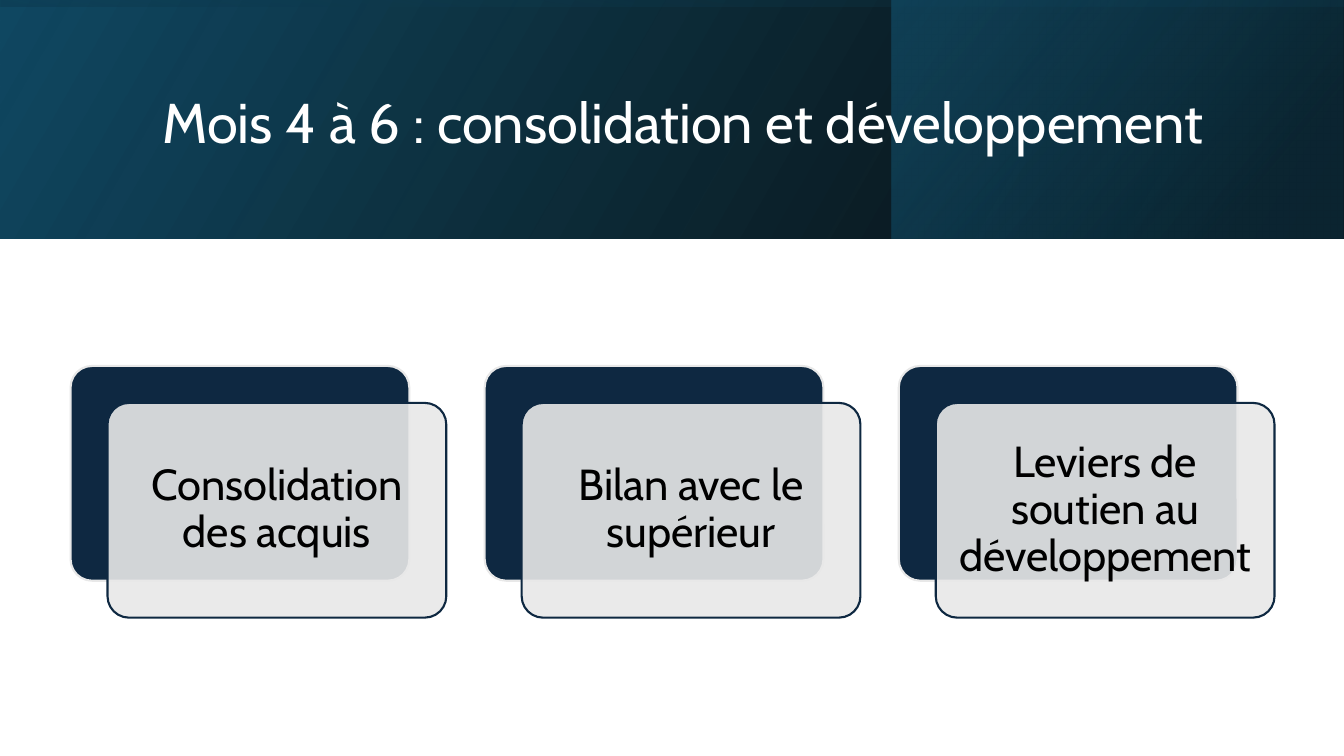
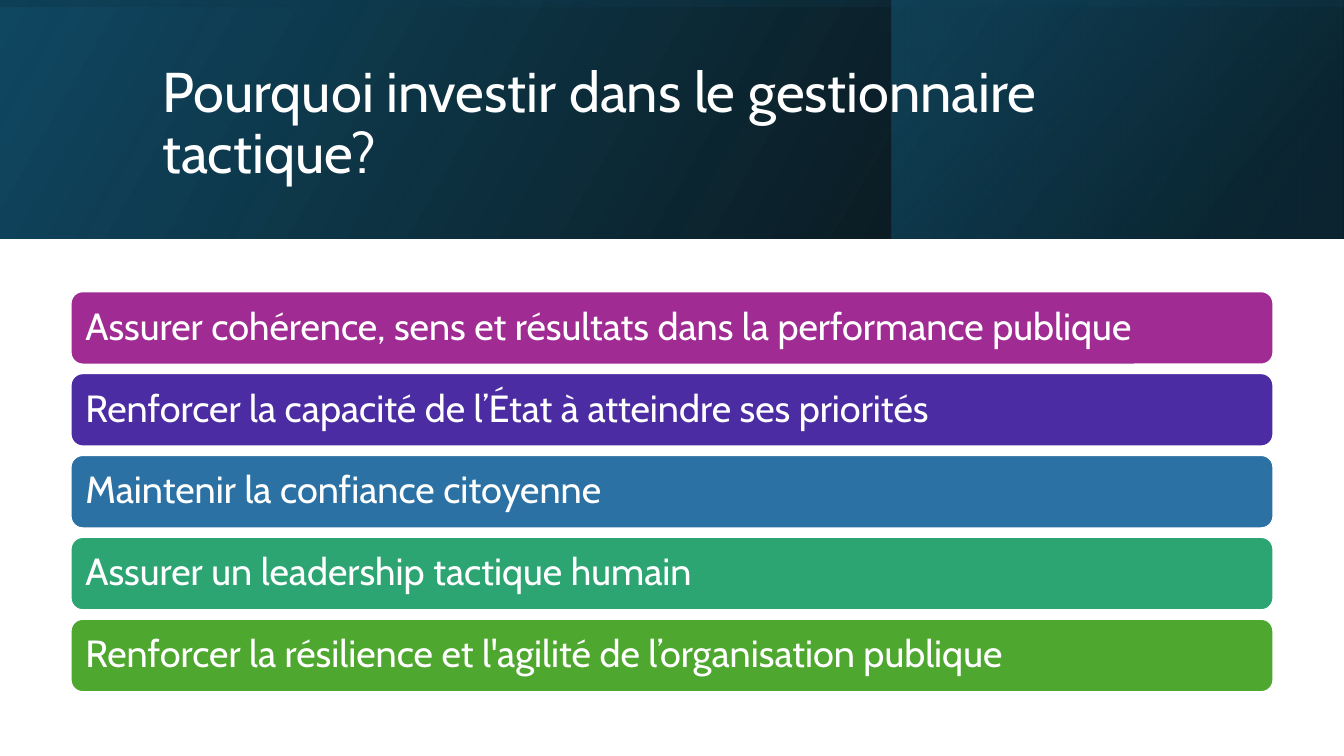
"""Build two slides on consolidating and investing in tactical managers."""
from lxml.etree import SubElement
from pptx import Presentation
from pptx.dml.color import RGBColor
from pptx.enum.shapes import MSO_SHAPE
from pptx.enum.text import MSO_ANCHOR, MSO_AUTO_SIZE, PP_ALIGN
from pptx.oxml import parse_xml
from pptx.oxml.ns import nsdecls, qn
from pptx.util import Pt

FONT = "Cabin"
NAVY, GREY, WHITE, BLACK = "0E2841", "E8E8E8", "FFFFFF", "000000"
WIDTH, HEIGHT, BAND = 960, 540, 170.6
MARGIN = 50.4


def paint(fill, color, alpha=100):
    fill.solid()
    fill.fore_color.rgb = RGBColor.from_string(color)
    if alpha < 100:
        rgb = fill._xPr.find(qn("a:solidFill"))[0]
        SubElement(rgb, qn("a:alpha")).set("val", str(alpha * 1000))


def write(frame, text, size, color, align=PP_ALIGN.LEFT, inset=7.2, inset_y=3.6):
    frame.word_wrap = True
    frame.auto_size = MSO_AUTO_SIZE.NONE
    frame.vertical_anchor = MSO_ANCHOR.MIDDLE
    frame.margin_left = frame.margin_right = Pt(inset)
    frame.margin_top = frame.margin_bottom = Pt(inset_y)
    paragraph = frame.paragraphs[0]
    paragraph.alignment = align
    paragraph.line_spacing = 0.9
    run = paragraph.add_run()
    run.text = text
    run.font.name = FONT
    run.font.size = Pt(size)
    paint(run.font.fill, color)


prs = Presentation()
prs.slide_width, prs.slide_height = Pt(WIDTH), Pt(HEIGHT)

titles = [
    "Mois 4 à 6 : consolidation et développement",
    "Pourquoi investir dans le gestionnaire tactique?",
]
middle = (WIDTH - BAND) / 2
header_layers = [
    ((0, 0, WIDTH, BAND), 0, 330, [(0, BLACK, 96), (100, "104862", 100)]),
    ((636.6, 0, 322.8, BAND), 0, 320, [(19, "0B3041", 68), (100, "156082", 48)]),
    ((middle, -middle, BAND, WIDTH), 270, 350, [(23, "104862", 16), (99, BLACK, 45)]),
]

for heading in titles:
    slide = prs.slides.add_slide(prs.slide_layouts[5])
    for box, rotation, angle, stops in header_layers:
        layer = slide.shapes.add_shape(MSO_SHAPE.RECTANGLE, *map(Pt, box))
        layer.rotation = rotation
        layer.shadow.inherit = False
        layer.line.fill.background()
        layer.fill.background()
        properties = layer._element.spPr
        properties.find(qn("a:xfrm")).set("flipH", "1")
        stop_xml = "".join(
            f'<a:gs pos="{position * 1000}"><a:srgbClr val="{color}">'
            f'<a:alpha val="{alpha * 1000}"/></a:srgbClr></a:gs>'
            for position, color, alpha in stops
        )
        gradient = parse_xml(
            f'<a:gradFill {nsdecls("a")}><a:gsLst>{stop_xml}</a:gsLst>'
            f'<a:lin ang="{angle * 60000}" scaled="0"/></a:gradFill>'
        )
        properties.replace(properties.find(qn("a:noFill")), gradient)

    title = slide.shapes.title
    title.left, title.top, title.width, title.height = map(Pt, (108.7, 27.4, 765.4, 123.8))
    write(title.text_frame, heading, size=40, color=WHITE)
    slide.shapes._spTree.append(title._element)

consolidation, investment = prs.slides

themes = [
    "Consolidation des acquis",
    "Bilan avec le supérieur",
    "Leviers de soutien au développement",
]
card_width, card_height, card_pitch, card_top = 242, 153.4, 295.8, 261.4
card_offset = 26.4
for column, theme in enumerate(themes):
    left = MARGIN + column * card_pitch
    for shift, fill, outline, alpha in [(0, NAVY, GREY, 100), (card_offset, GREY, NAVY, 90)]:
        card = consolidation.shapes.add_shape(
            MSO_SHAPE.ROUNDED_RECTANGLE,
            Pt(left + shift), Pt(card_top + shift), Pt(card_width), Pt(card_height),
        )
        card.adjustments[0] = 0.1
        card.shadow.inherit = False
        paint(card.fill, fill, alpha)
        paint(card.line.fill, outline)
        card.line.width = Pt(1.5)
    write(card.text_frame, theme, size=31, color=BLACK,
          align=PP_ALIGN.CENTER, inset=9.4, inset_y=9.4)

reasons = [
    ("Assurer cohérence, sens et résultats dans la performance publique", "A02B93"),
    ("Renforcer la capacité de l’État à atteindre ses priorités", "4B2CA2"),
    ("Maintenir la confiance citoyenne", "2C71A4"),
    ("Assurer un leadership tactique humain", "2DA573"),
    ("Renforcer la résilience et l'agilité de l’organisation publique", "4EA72E"),
]
bar_top, bar_height, bar_pitch = 208, 52.4, 58.5
for row, (reason, color) in enumerate(reasons):
    bar = investment.shapes.add_shape(
        MSO_SHAPE.ROUNDED_RECTANGLE,
        Pt(MARGIN), Pt(bar_top + row * bar_pitch), Pt(WIDTH - 2 * MARGIN), Pt(bar_height),
    )
    bar.shadow.inherit = False
    paint(bar.fill, color)
    paint(bar.line.fill, WHITE)
    bar.line.width = Pt(1.5)
    write(bar.text_frame, reason, size=27, color=WHITE, inset=8, inset_y=8)

prs.save("out.pptx")
